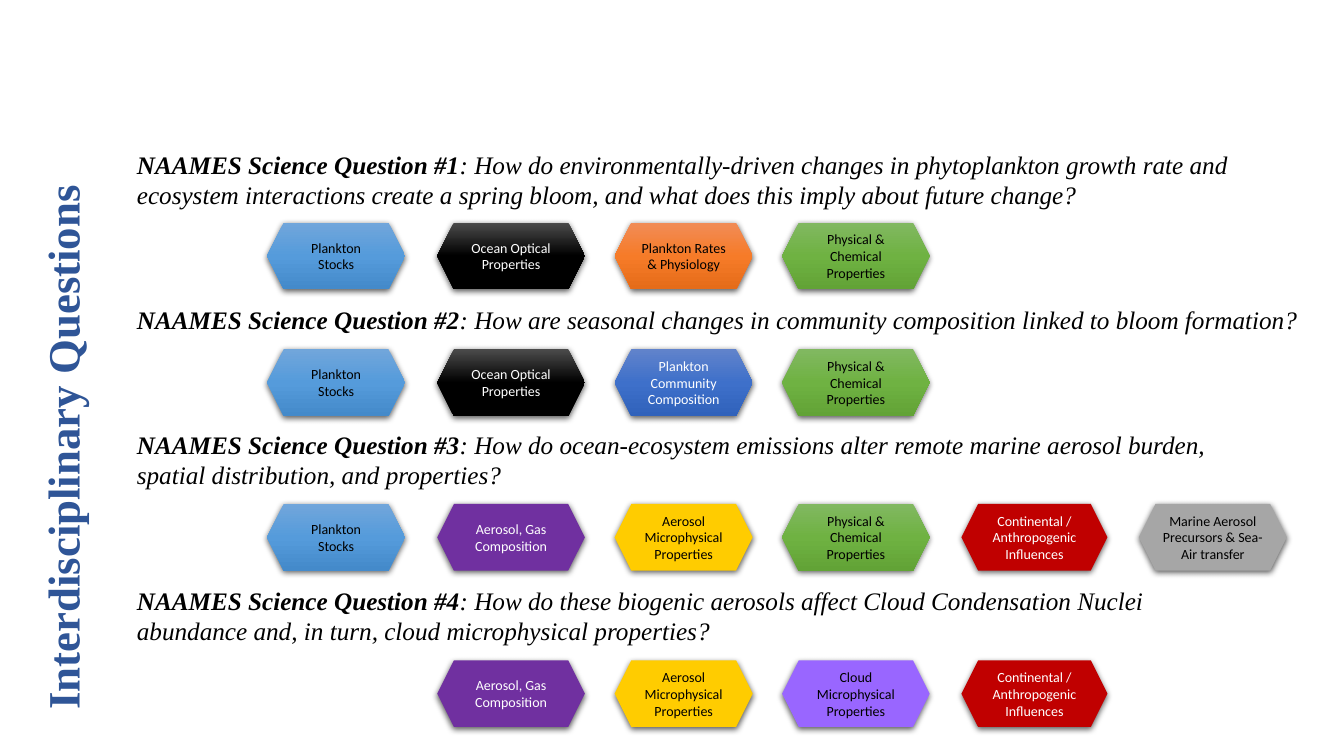
import pptx
import copy
import pptx.util
import pptx.dml.color
import pptx.enum.shapes
import pptx.enum.text
import pptx.oxml.ns
import lxml.etree

Cm = pptx.util.Cm
qn = pptx.oxml.ns.qn

BLACK, WHITE = "000000", "FFFFFF"
SERIF = "Times New Roman"
LEFTS = [6.73, 11.02, 15.49, 19.71, 24.23, 28.7]
WIDTHS = [3.48, 3.72, 3.48, 3.72, 3.68, 3.73]

TILES = {
    "stocks": ("Plankton Stocks", 0, ["71A6DB", "559BDB", "448ACA"], BLACK),
    "ocean": ("Ocean Optical Properties", 1, ["4B4B4B", "000000", "000000"], WHITE),
    "gas": ("Aerosol, Gas Composition", 1, ["7030A0"], WHITE),
    "rates": ("Plankton Rates & Physiology", 2, ["F18C57", "F67B28", "E56C19"], BLACK),
    "plankton": ("Plankton Community Composition", 2, ["6183CB", "3E70CA", "3062BB"], WHITE),
    "micro": ("Aerosol Microphysical Properties", 2, ["FFCC00"], BLACK),
    "physics": ("Physical & Chemical Properties", 3, ["81B861", "6FB242", "62A336"], BLACK),
    "cloud": ("Cloud Microphysical Properties", 3, ["9966FF"], BLACK),
    "land": ("Continental / Anthropogenic Influences", 4, ["C00000"], WHITE),
    "marine": ("Marine Aerosol Precursors & Sea-Air transfer", 5, ["A6A6A6"], BLACK),
}

ROWS = [
    (3.63, 29.24, 1.8, 5.61,
     "How do environmentally-driven changes in phytoplankton growth rate and "
     "ecosystem interactions create a spring bloom, and what does this imply about future change?",
     ["stocks", "ocean", "rates", "physics"]),
    (7.54, 30.3, 1.02, 8.8,
     "How are seasonal changes in community composition linked to bloom formation?",
     ["stocks", "ocean", "plankton", "physics"]),
    (10.69, 27.58, 1.8, 12.7,
     "How do ocean-ecosystem emissions alter remote marine aerosol burden, "
     "spatial distribution, and properties?",
     ["stocks", "gas", "micro", "physics", "land", "marine"]),
    (14.63, 27.58, 1.8, 16.64,
     "How do these biogenic aerosols affect Cloud Condensation Nuclei "
     "abundance and, in turn, cloud microphysical properties?",
     ["gas", "micro", "cloud", "land"]),
]


def color(code):
    return pptx.dml.color.RGBColor.from_string(code)


def write(para, text, size=18, font=SERIF, shade=BLACK, bold=False, slant=False):
    run = para.add_run()
    run.text = text
    run.font.size = pptx.util.Pt(size)
    run.font.name = font
    run.font.color.rgb = color(shade)
    run.font.bold = bold
    run.font.italic = slant


def add_box(slide, left, top, width, height):
    box = slide.shapes.add_textbox(Cm(left), Cm(top), Cm(width), Cm(height))
    box.text_frame.word_wrap = True
    box.text_frame.auto_size = pptx.enum.text.MSO_AUTO_SIZE.SHAPE_TO_FIT_TEXT
    return box


def paint(shape, shades):
    if len(shades) == 1:
        shape.fill.solid()
        shape.fill.fore_color.rgb = color(shades[0])
        return
    shape.fill.gradient()
    shape.fill.gradient_angle = 270
    stops = shape._element.spPr.find(".//" + qn("a:gsLst"))
    stops.append(copy.deepcopy(stops[0]))
    for index, (stop, shade) in enumerate(zip(shape.fill.gradient_stops, shades)):
        stop.position = index / 2
        stop.color.rgb = color(shade)


def add_shadow(shape):
    shape.shadow.inherit = False
    effects = shape._element.spPr.find(qn("a:effectLst"))
    outer = lxml.etree.SubElement(
        effects, qn("a:outerShdw"), blurRad="57150", dist="19050",
        dir="5400000", algn="ctr", rotWithShape="0")
    shade = lxml.etree.SubElement(outer, qn("a:srgbClr"), val=BLACK)
    lxml.etree.SubElement(shade, qn("a:alpha"), val="63000")


def add_tile(slide, key, top):
    text, col, shades, ink = TILES[key]
    tile = slide.shapes.add_shape(
        pptx.enum.shapes.MSO_SHAPE.HEXAGON,
        Cm(LEFTS[col]), Cm(top), Cm(WIDTHS[col]), Cm(1.68))
    paint(tile, shades)
    tile.line.fill.background()
    add_shadow(tile)
    frame = tile.text_frame
    frame.word_wrap = True
    frame.vertical_anchor = pptx.enum.text.MSO_ANCHOR.MIDDLE
    if key == "marine":
        frame.margin_left = frame.margin_right = 0
    para = frame.paragraphs[0]
    para.alignment = pptx.enum.text.PP_ALIGN.CENTER
    write(para, text, size=10, font="Calibri", shade=ink)


def add_row(slide, number, row):
    top, width, height, line, text, keys = row
    para = add_box(slide, 3.2, top, width, height).text_frame.paragraphs[0]
    write(para, f"NAAMES Science Question #{number}", bold=True, slant=True)
    write(para, f": {text}", slant=True)
    for key in keys:
        add_tile(slide, key, line)


def add_title(slide):
    box = add_box(slide, -6.1, 10.46, 15.34, 1.63)
    box.rotation = 270
    para = box.text_frame.paragraphs[0]
    para.alignment = pptx.enum.text.PP_ALIGN.CENTER
    write(para, "Interdisciplinary Questions", size=32, shade="2F5597", bold=True)


def main():
    deck = pptx.Presentation()
    deck.slide_width, deck.slide_height = Cm(33.87), Cm(19.05)
    slide = deck.slides.add_slide(deck.slide_layouts[6])
    for number, row in enumerate(ROWS, 1):
        add_row(slide, number, row)
    add_title(slide)
    deck.save("out.pptx")


if __name__ == "__main__":
    main()
